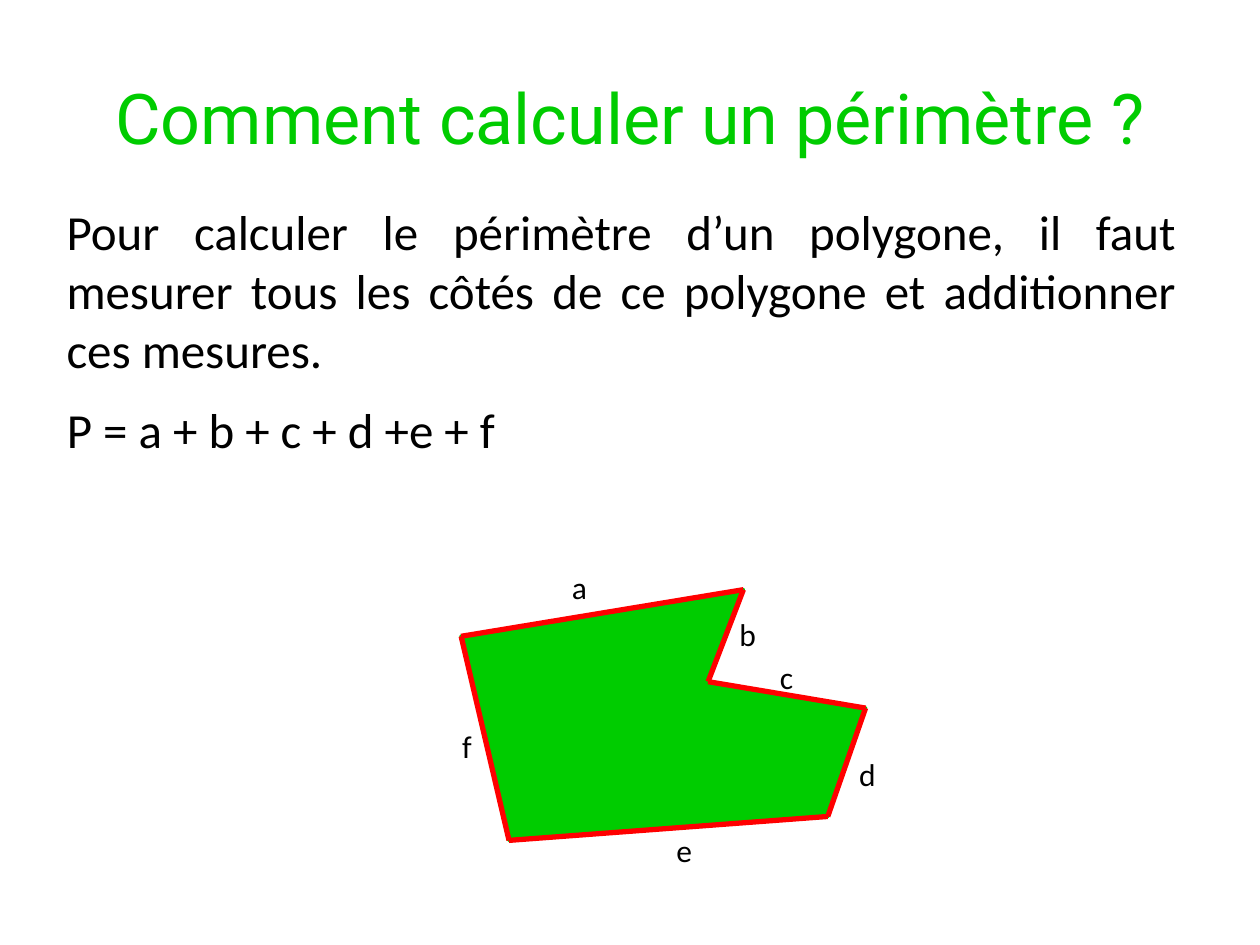
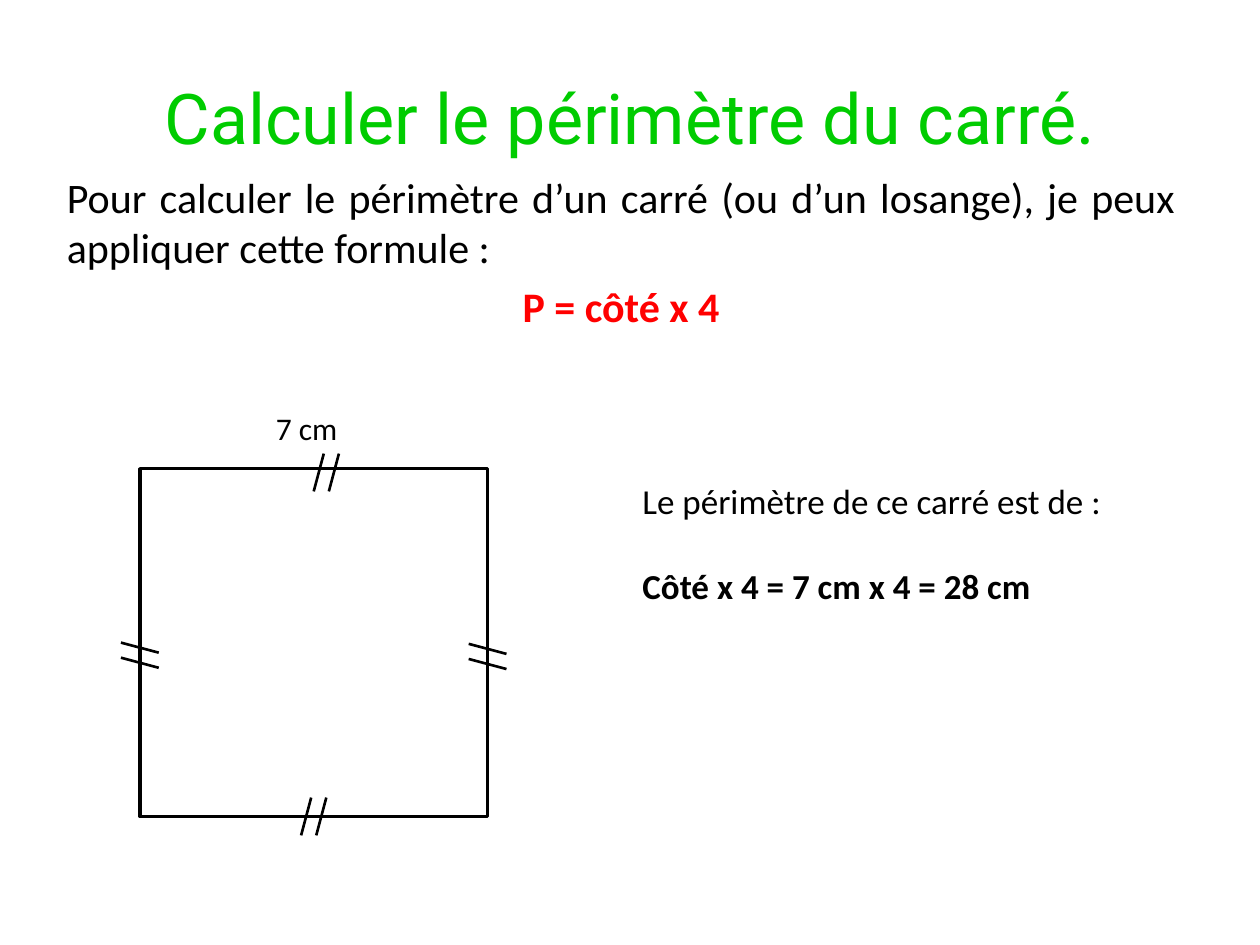
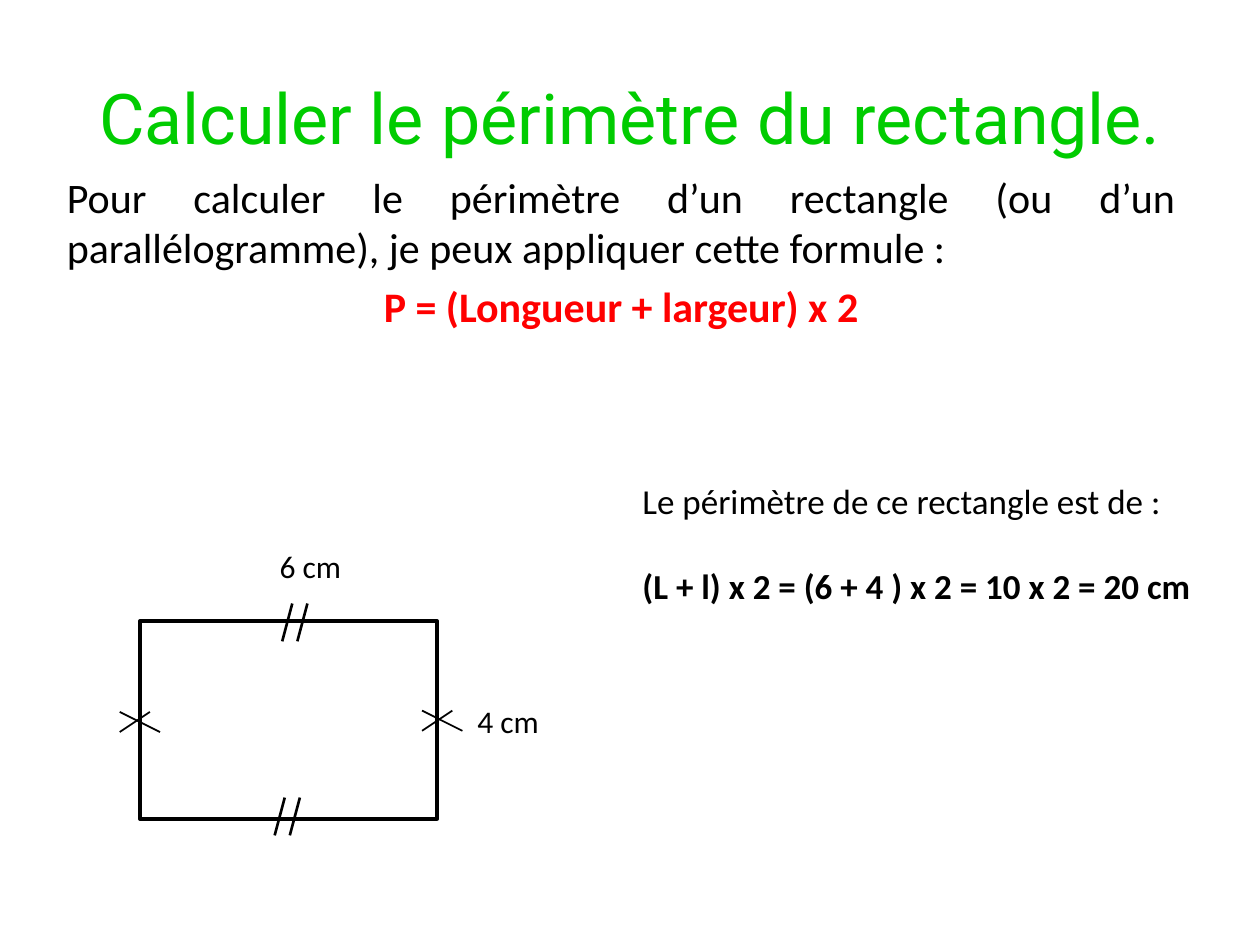
"""Builds three slides on the perimeter of a polygon, a square and a rectangle."""
from dataclasses import dataclass

from lxml.etree import SubElement
from pptx import Presentation
from pptx.dml.color import RGBColor as RGB
from pptx.enum.shapes import MSO_CONNECTOR as CONN, MSO_SHAPE as SHAPE
from pptx.enum.text import MSO_ANCHOR as ANCHOR, MSO_AUTO_SIZE as AUTO, PP_ALIGN as AL
from pptx.oxml.ns import qn
from pptx.util import Inches, Pt


@dataclass(frozen=True)
class Theme:
    green: RGB = RGB(0x00, 0xCC, 0x00)
    red: RGB = RGB(0xFF, 0x00, 0x00)
    black: RGB = RGB(0x00, 0x00, 0x00)
    white: RGB = RGB(0xFF, 0xFF, 0xFF)
    title_font: str = "Roboto"
    text_font: str = "Calibri"
    title: float = 40
    definition: float = 28
    rule: float = 24
    answer: float = 20
    label: float = 18


T = Theme()

TITLE_BOX = (0.5, 0.3, 9, 1.25)
DEFINITION_BOX = (0.43, 1.55, 9, 1.28)
SUM_BOX = (0.43, 3.12, 9, 0.74)
RULE_BOX = (0.43, 1.31, 9, 2.2)

POLYGON = {
    "title": "Comment calculer un périmètre ?",
    "definition": "Pour calculer le périmètre d’un polygone, il faut mesurer tous "
                  "les côtés de ce polygone et additionner ces mesures.",
    "sum": "P = a + b + c + d +e + f",
    "corners": [(3.66, 5.05), (5.9, 4.68), (5.62, 5.41),
                (6.87, 5.62), (6.57, 6.48), (4.04, 6.67)],
    "labels": [("a", 4.44, 4.46), ("b", 5.77, 4.83), ("c", 6.09, 5.17),
               ("d", 6.72, 5.94), ("e", 5.27, 6.55), ("f", 3.57, 5.72)],
}

MARKS = {
    "across": (1.5, [(0.04 + d, -0.15, -0.04 + d, 0.15) for d in (-0.06, 0.06)]),
    "down": (1.5, [(-0.15, -0.04 + d, 0.15, 0.04 + d) for d in (-0.06, 0.06)]),
    "cross": (1, [(-0.16, -0.08, 0.16, 0.08), (-0.16, 0.08, 0.08, -0.08)]),
}

QUADRILATERALS = [
    {
        "title": "Calculer le périmètre du carré.",
        "rule": "Pour calculer le périmètre d’un carré (ou d’un losange), "
                "je peux appliquer cette formule :",
        "formula": "P = côté x 4",
        "question": "Le périmètre de ce carré est de :",
        "answer": "Côté x 4 = 7 cm x 4 = 28 cm",
        "answer_box": (5, 3.76, 4.49, 1.11),
        "outline": (1.11, 3.72, 2.76, 2.76),
        "labels": [("7 cm", 2.09, 3.2)],
        "marks": [("across", 2.59, 3.75), ("across", 2.49, 6.48),
                  ("down", 3.87, 5.21), ("down", 1.11, 5.2)],
    },
    {
        "title": "Calculer le périmètre du rectangle.",
        "rule": "Pour calculer le périmètre d’un rectangle (ou d’un parallélogramme), "
                "je peux appliquer cette formule :",
        "formula": "P = (Longueur + largeur) x 2",
        "question": "Le périmètre de ce rectangle est de :",
        "answer": "(L + l) x 2 = (6 + 4 ) x 2 = 10 x 2 = 20 cm",
        "answer_box": (5, 3.76, 4.72, 1.11),
        "outline": (1.11, 4.93, 2.36, 1.57),
        "labels": [("6 cm", 2.12, 4.29), ("4 cm", 3.69, 5.52)],
        "marks": [("across", 2.34, 4.94), ("across", 2.28, 6.48),
                  ("cross", 3.51, 5.72), ("cross", 1.11, 5.73)],
    },
]


def place(sp, box):
    sp.left, sp.top, sp.width, sp.height = map(Inches, box)


def write(p, text, size, color=T.black, bold=False, align=None, font=T.text_font):
    r = p.add_run()
    r.text = text
    r.font.name, r.font.size, r.font.bold = font, Pt(size), bold
    r.font.color.rgb = color
    p.alignment = align


def add_titled_slide(prs, title):
    s = prs.slides.add_slide(prs.slide_layouts[1])
    place(s.shapes.title, TITLE_BOX)
    tf = s.shapes.title.text_frame
    tf.auto_size, tf.vertical_anchor = AUTO.NONE, ANCHOR.MIDDLE
    write(tf.paragraphs[0], title, T.title, T.green, align=AL.CENTER, font=T.title_font)
    return s


def fill_body(s, box, size, text, formula=None):
    sp = s.placeholders[1]
    place(sp, box)
    tf = sp.text_frame
    tf.auto_size = AUTO.NONE
    write(tf.paragraphs[0], text, size, align=AL.JUSTIFY)
    if formula:
        write(tf.add_paragraph(), formula, size, T.red, True, AL.CENTER)
    for p in tf.paragraphs:
        pPr = p._p.get_or_add_pPr()
        pPr.set("marL", "0")
        pPr.set("indent", "0")
        SubElement(pPr, qn("a:buNone"))


def add_text(s, box):
    tf = s.shapes.add_textbox(*map(Inches, box)).text_frame
    tf.word_wrap = True
    return tf


def add_labels(s, labels, width):
    for text, x, y in labels:
        tf = add_text(s, (x, y, width, 0.4))
        write(tf.paragraphs[0], text, T.label)


def add_line(s, start, end, color, width):
    c = s.shapes.add_connector(CONN.STRAIGHT, *map(Inches, (*start, *end)))
    c.line.color.rgb, c.line.width = color, Pt(width)
    SubElement(c._element.spPr, qn("a:effectLst"))


def paint(sp, fill, line):
    sp.shadow.inherit = False
    sp.fill.solid()
    sp.fill.fore_color.rgb = fill
    sp.line.color.rgb, sp.line.width = line, Pt(2)


def build_polygon(prs, d):
    s = add_titled_slide(prs, d["title"])
    fill_body(s, SUM_BOX, T.definition, d["sum"])
    tf = add_text(s, DEFINITION_BOX)
    write(tf.paragraphs[0], d["definition"], T.definition, align=AL.JUSTIFY)
    corners = d["corners"]
    points = [tuple(map(Inches, c)) for c in corners]
    fb = s.shapes.build_freeform(*points[0])
    fb.add_line_segments(points[1:], close=True)
    paint(fb.convert_to_shape(), T.green, T.green)
    for start, end in zip(corners, corners[1:] + corners[:1]):
        add_line(s, start, end, T.red, 3)
    add_labels(s, d["labels"], 0.49)


def build_quadrilateral(prs, d):
    s = add_titled_slide(prs, d["title"])
    fill_body(s, RULE_BOX, T.rule, d["rule"], d["formula"])
    tf = add_text(s, d["answer_box"])
    write(tf.paragraphs[0], d["question"], T.answer)
    p = tf.add_paragraph()
    p.space_before = Pt(24.4)
    write(p, d["answer"], T.answer, bold=True)
    sp = s.shapes.add_shape(SHAPE.RECTANGLE, *map(Inches, d["outline"]))
    paint(sp, T.white, T.black)
    add_labels(s, d["labels"], 1.02)
    for kind, x, y in d["marks"]:
        width, strokes = MARKS[kind]
        for x1, y1, x2, y2 in strokes:
            add_line(s, (x + x1, y + y1), (x + x2, y + y2), T.black, width)


def main():
    prs = Presentation()
    prs.slide_width, prs.slide_height = Inches(10), Inches(7.5)
    build_polygon(prs, POLYGON)
    for d in QUADRILATERALS:
        build_quadrilateral(prs, d)
    prs.save("out.pptx")


if __name__ == "__main__":
    main()
